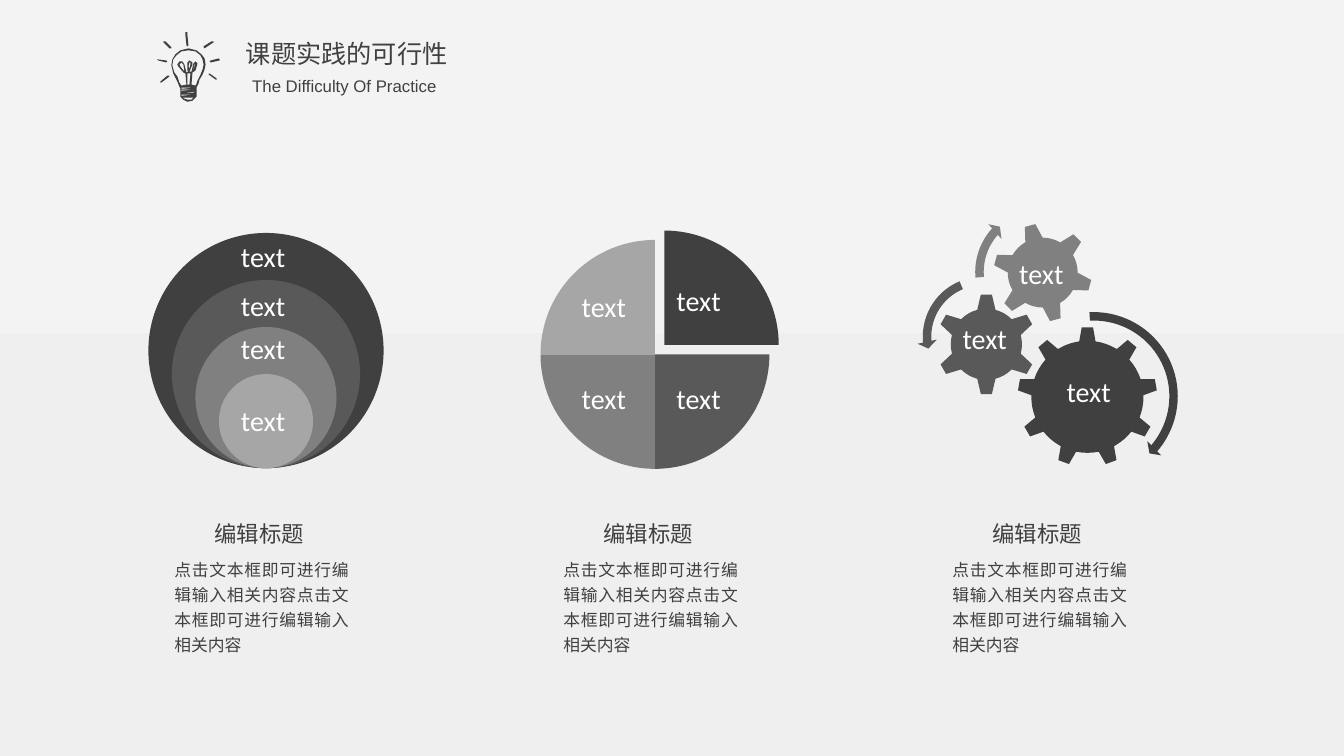
from lxml.etree import SubElement
from pptx import Presentation
from pptx.dml.color import RGBColor
from pptx.enum.shapes import MSO_SHAPE
from pptx.enum.text import MSO_ANCHOR, MSO_AUTO_SIZE, PP_ALIGN
from pptx.oxml.ns import qn
from pptx.util import Pt

DARK = RGBColor(0x40, 0x40, 0x40)
SLATE = RGBColor(0x59, 0x59, 0x59)
MEDIUM = RGBColor(0x80, 0x80, 0x80)
LIGHT = RGBColor(0xA6, 0xA6, 0xA6)
WHITE = RGBColor(0xFF, 0xFF, 0xFF)
GROUND_LOW = RGBColor(0xEF, 0xEF, 0xEF)
GROUND_HIGH = RGBColor(0xF3, 0xF3, 0xF3)
SHADES = (DARK, SLATE, MEDIUM, LIGHT)
CHINESE = "Noto Sans CJK SC"

TITLE = "课题实践的可行性"
SUBTITLE = "The Difficulty Of Practice"
LABEL = "text"
HEADING = "编辑标题"
DESCRIPTION = "点击文本框即可进行编辑输入相关内容" * 2
COLUMN_LEFT, COLUMN_PITCH, COLUMN_COUNT = 117.4, 277.9, 3

LABEL_CENTRES = [
    (187.9, 182.9), (187.9, 218.2), (187.9, 249.1), (187.9, 300.2),
    (431.3, 218.9), (431.3, 284.4), (499, 284.4), (499, 214.6),
    (743.8, 195.1), (777.6, 279.4), (703.4, 241.9),
]

CIRCLE_CENTRE, CIRCLE_BOTTOM, CIRCLE_SIZE = 190, 334.4, 168
PIE_LEFT, PIE_TOP, PIE_SIZE, PIE_OFFSET = 386.1, 171.4, 163.5, 6.7

GEARS = [
    (MSO_SHAPE.GEAR_9_TEETH if hasattr(MSO_SHAPE, "GEAR_9_TEETH") else MSO_SHAPE.GEAR_9,
     726.7, 233.4, 100.1, DARK, 0, ()),
    (MSO_SHAPE.GEAR_6, 668.2, 209.6, 72.7, SLATE, 0, ()),
    (MSO_SHAPE.GEAR_6, 709.2, 159.1, 71.3, MEDIUM, 345, ()),
    (MSO_SHAPE.CIRCULAR_ARROW, 717.1, 218.9, 128.2, DARK, 0,
     (0.047, 2.99, 24.436, 160.276, 0.055)),
    (MSO_SHAPE.LEFT_CIRCULAR_ARROW, 655.2, 193.7, 93.6, SLATE, 0,
     (0.065, 4.3, 104.891, 148.378, 0.075)),
    (MSO_SHAPE.CIRCULAR_ARROW, 692.6, 144, 100.8, MEDIUM, 0,
     (0.06, 3.941, 133.138, 105.082, 0.07)),
]

BULB_UNIT = 0.72
BULB = [
    [(187, 48), (179, 50), (174, 54), (171, 59), (170, 65), (172, 73), (174, 77),
     (176, 81), (178, 86), (179, 88), (179, 96), (182, 99), (186, 101), (191, 100),
     (193, 98), (195, 96), (195, 87), (197, 83), (198, 79), (201, 74), (203, 69),
     (204, 64), (203, 58), (200, 54), (195, 50)],
    [(199, 74), (196, 80), (195, 83), (194, 85), (190, 84), (191, 72), (194, 70),
     (196, 63), (194, 61), (192, 63), (190, 71), (188, 71), (191, 64), (191, 62),
     (188, 60), (186, 62), (186, 70), (187, 71), (185, 72), (183, 64), (181, 61),
     (178, 61), (176, 64), (177, 66), (182, 72), (184, 73), (185, 84), (180, 85),
     (178, 82), (176, 76), (173, 72), (171, 65), (172, 59), (175, 55), (180, 51),
     (187, 50), (194, 51), (199, 55), (201, 59), (202, 64), (201, 69)],
    [(186, 73), (189, 73), (188, 84), (186, 84)],
    [(187, 66), (188, 62), (189, 62), (189, 64), (188, 68)],
    [(194, 63), (192, 69), (191, 71), (193, 64)],
    [(183, 71), (179, 66), (178, 64), (180, 62), (182, 64)],
    [(180, 87), (193, 87), (182, 88), (180, 88)],
    [(180, 90), (180, 89), (193, 89)],
    [(180, 92), (193, 91), (192, 92)],
    [(180, 95), (180, 94), (192, 94)],
    [(181, 97), (192, 97), (190, 99), (186, 99), (183, 98)],
]
RAYS = [
    [(185, 32), (184, 32), (184, 35), (185, 45), (186, 46), (187, 45), (186, 35), (186, 32)],
    [(210, 41), (202, 46), (202, 47), (203, 48), (212, 42), (212, 41)],
    [(218, 59), (217, 58), (209, 60), (208, 61), (209, 62), (218, 60)],
    [(214, 79), (215, 79), (215, 78), (208, 73), (207, 73), (207, 74)],
    [(170, 48), (170, 47), (164, 41), (162, 41), (162, 42), (168, 48)],
    [(166, 61), (165, 60), (157, 59), (156, 59), (157, 60), (165, 62)],
    [(160, 82), (168, 76), (168, 75), (166, 75), (159, 81), (159, 82)],
]


def write(box, text, size, font=CHINESE, color=DARK, align=PP_ALIGN.CENTER,
          anchor=MSO_ANCHOR.MIDDLE, spacing=1.0):
    frame = box.text_frame
    frame.word_wrap = True
    frame.auto_size = MSO_AUTO_SIZE.NONE
    frame.vertical_anchor = anchor
    para = frame.paragraphs[0]
    para.alignment = align
    para.line_spacing = spacing
    span = para.add_run()
    span.text = text
    span.font.size = Pt(size)
    span.font.color.rgb = color
    span.font.name = font
    SubElement(span.font._element, qn("a:ea")).set("typeface", font)


def add_text(page, left, top, width, height, text, size, **style):
    box = page.shapes.add_textbox(Pt(left), Pt(top), Pt(width), Pt(height))
    write(box, text, size, **style)


def paint(shape, color):
    shape.shadow.inherit = False
    shape.fill.solid()
    shape.fill.fore_color.rgb = color
    shape.line.fill.background()


def add_square(group, kind, left, top, size, color, rotation=0, adjustments=()):
    shape = group.shapes.add_shape(kind, Pt(left), Pt(top), Pt(size), Pt(size))
    for index, value in enumerate(adjustments):
        shape.adjustments[index] = value
    shape.rotation = rotation
    paint(shape, color)


def add_outline(group, contours):
    first, *holes = contours
    builder = group.shapes.build_freeform(*first[0], scale=Pt(BULB_UNIT))
    builder.add_line_segments(first[1:], close=True)
    for hole in holes:
        builder.move_to(*hole[0])
        builder.add_line_segments(hole[1:], close=True)
    paint(builder.convert_to_shape(), DARK)


def main():
    deck = Presentation()
    deck.slide_width, deck.slide_height = Pt(960), Pt(540)
    page = deck.slides.add_slide(deck.slide_layouts[5])

    ground = page.background.fill
    ground.gradient()
    ground.gradient_angle = 90
    for stop, color, position in zip(ground.gradient_stops, (GROUND_LOW, GROUND_HIGH), (0.12, 1)):
        stop.color.rgb = color
        stop.position = position

    title = page.shapes.title
    title.left, title.top, title.width, title.height = Pt(52.6), Pt(23.8), Pt(390.2), Pt(28.8)
    write(title, TITLE, 18)
    add_text(page, 48.4, 50.4, 395.3, 21.6, SUBTITLE, 12, font="Arial")

    icon = page.shapes.add_group_shape()
    for contours in [BULB] + [[ray] for ray in RAYS]:
        add_outline(icon, contours)

    circles = page.shapes.add_group_shape()
    for index, color in enumerate(SHADES):
        size = CIRCLE_SIZE * (1 - index / 5)
        add_square(circles, MSO_SHAPE.OVAL, CIRCLE_CENTRE - size / 2, CIRCLE_BOTTOM - size,
                   size, color)

    pie = page.shapes.add_group_shape()
    for index, color in enumerate(SHADES):
        shift = 0 if index else PIE_OFFSET
        start = (index + 3) % 4 * 54
        add_square(pie, MSO_SHAPE.PIE, PIE_LEFT + shift, PIE_TOP - shift, PIE_SIZE, color,
                   adjustments=(start, (start + 54) % 216))

    gears = page.shapes.add_group_shape()
    for gear in GEARS:
        add_square(gears, *gear)

    for centre, middle in LABEL_CENTRES:
        add_text(page, centre - 53.3, middle - 15.8, 106.6, 31.6, LABEL, 20,
                 font="Calibri", color=WHITE)

    for column in range(COLUMN_COUNT):
        left = COLUMN_LEFT + column * COLUMN_PITCH
        add_text(page, left, 392.4, 139, 80, DESCRIPTION, 12, align=PP_ALIGN.JUSTIFY,
                 anchor=MSO_ANCHOR.TOP, spacing=1.25)
        add_text(page, left + 24.2, 367.9, 87.1, 26.6, HEADING, 16)

    deck.save("out.pptx")


if __name__ == "__main__":
    main()
